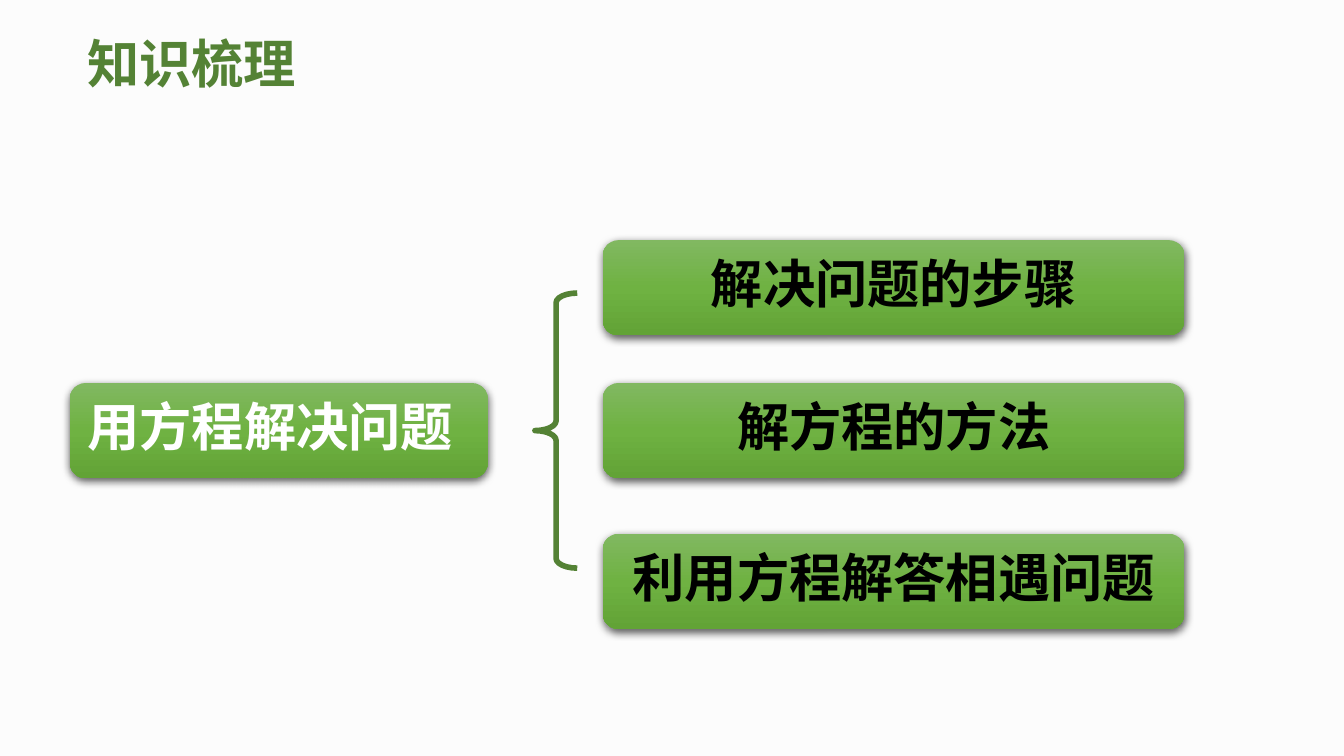
from lxml.etree import SubElement
from pptx import Presentation
from pptx.dml.color import RGBColor
from pptx.enum.shapes import MSO_SHAPE as Shape
from pptx.enum.text import MSO_ANCHOR as Anchor, MSO_AUTO_SIZE as AutoSize, PP_ALIGN as Align
from pptx.oxml.ns import qn
from pptx.util import Cm, Pt


def color(value):
    return RGBColor.from_string(value)


class SlideBuilder:
    """Holds the style and the current slide, and draws each kind of element."""

    font_name = "Noto Sans CJK SC"
    font_size = 28
    accent = "548235"
    gradient = ((0, "81B861"), (50, "6FB242"), (100, "62A336"))
    card_height = 1.8

    def __init__(self, deck):
        self.page = deck.slides.add_slide(deck.slide_layouts[6])
        fill = self.page.background.fill
        fill.solid()
        fill.fore_color.rgb = color("FCFCFC")

    def add_text(self, box, text, ink, align, wrap):
        frame = box.text_frame
        frame.word_wrap = wrap
        frame.auto_size = AutoSize.SHAPE_TO_FIT_TEXT
        frame.vertical_anchor = Anchor.TOP
        para = frame.paragraphs[0]
        para.alignment = align
        span = para.add_run()
        span.text = text
        span.font.name = self.font_name
        span.font.size = Pt(self.font_size)
        span.font.bold = True
        span.font.color.rgb = color(ink)
        SubElement(span.font._element, qn("a:ea"), typeface=self.font_name)

    def title(self, text, left, top, width, height):
        box = self.page.shapes.add_textbox(Cm(left), Cm(top), Cm(width), Cm(height))
        self.add_text(box, text, self.accent, Align.LEFT, True)

    def paint(self, box):
        box.line.fill.background()
        properties = box._element.spPr
        blend = SubElement(properties, qn("a:gradFill"), rotWithShape="1")
        stops = SubElement(blend, qn("a:gsLst"))
        for position, value in self.gradient:
            stop = SubElement(stops, qn("a:gs"), pos=str(position * 1000))
            SubElement(stop, qn("a:srgbClr"), val=value)
        SubElement(blend, qn("a:lin"), ang="5400000", scaled="0")
        properties.find(qn("a:ln")).addprevious(blend)

    def shade(self, box):
        box.shadow.inherit = False
        effects = box._element.spPr.find(qn("a:effectLst"))
        shadow = SubElement(effects, qn("a:outerShdw"), blurRad=str(Pt(4.5)),
                            dist=str(Pt(1.5)), dir="5400000", algn="ctr", rotWithShape="0")
        tone = SubElement(shadow, qn("a:srgbClr"), val="000000")
        SubElement(tone, qn("a:alpha"), val="63000")

    def card(self, text, left, top, width, ink="000000", align=Align.CENTER, wrap=False):
        box = self.page.shapes.add_shape(
            Shape.ROUNDED_RECTANGLE, Cm(left), Cm(top), Cm(width), Cm(self.card_height))
        self.paint(box)
        self.shade(box)
        self.add_text(box, text, ink, align, wrap)

    def brace(self, left, top, width, height):
        box = self.page.shapes.add_shape(
            Shape.LEFT_BRACE, Cm(left), Cm(top), Cm(width), Cm(height))
        box.adjustments[0] = 0.23
        box.fill.background()
        box.line.color.rgb = color(self.accent)
        box.line.width = Pt(3)
        box.shadow.inherit = False


def main():
    deck = Presentation()
    deck.slide_width = Cm(25.4)
    deck.slide_height = Cm(14.29)
    builder = SlideBuilder(deck)
    builder.title("知识梳理", 1.4, 0.46, 4.72, 1.45)
    builder.card("用方程解决问题", 1.32, 7.24, 7.9, "FFFFFF", Align.LEFT, True)
    topics = (("解决问题的步骤", 4.54), ("解方程的方法", 7.24), ("利用方程解答相遇问题", 10.09))
    for topic, top in topics:
        builder.card(topic, 11.39, top, 11)
    builder.brace(10.11, 5.54, 0.8, 5.2)
    deck.save("out.pptx")


if __name__ == "__main__":
    main()
